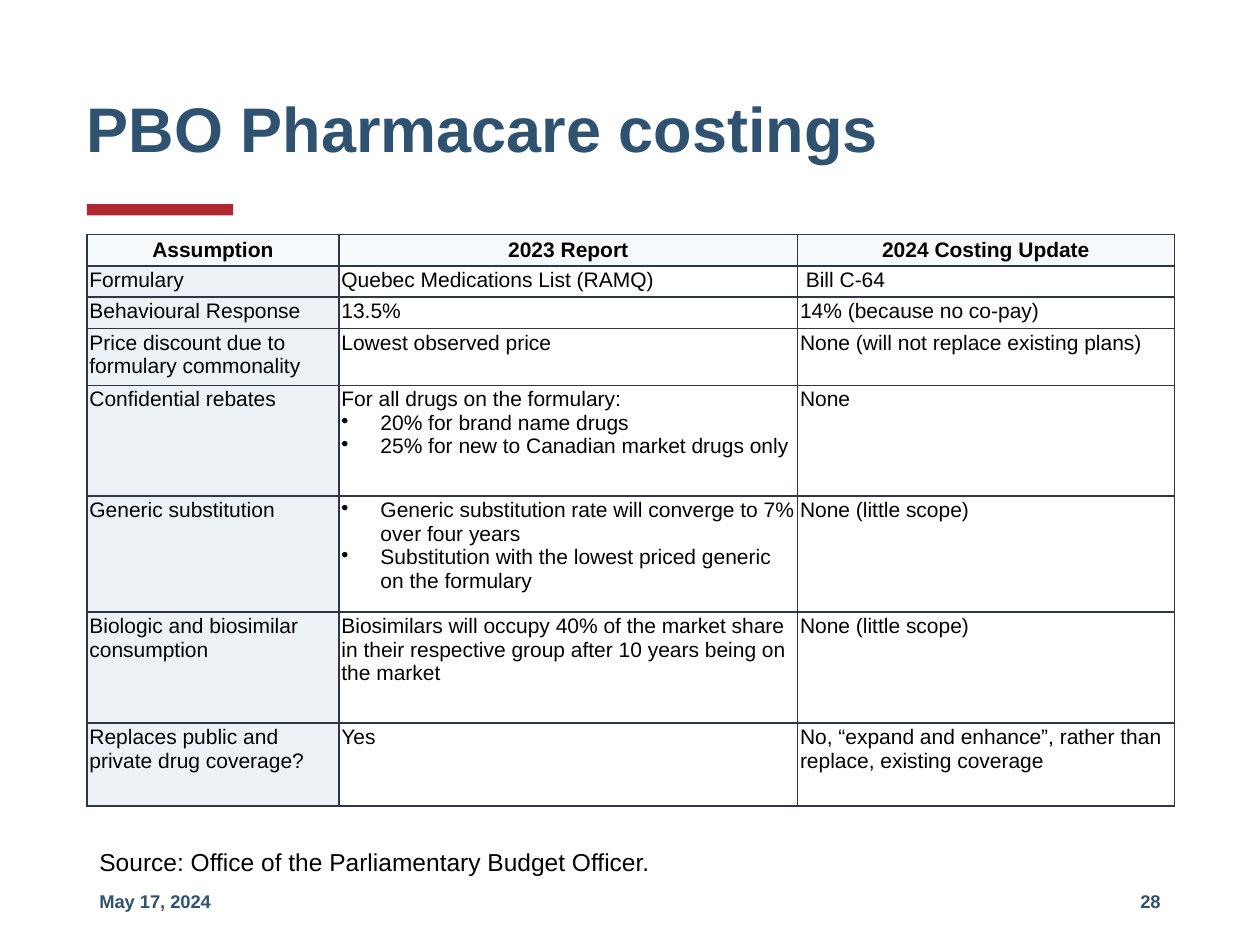
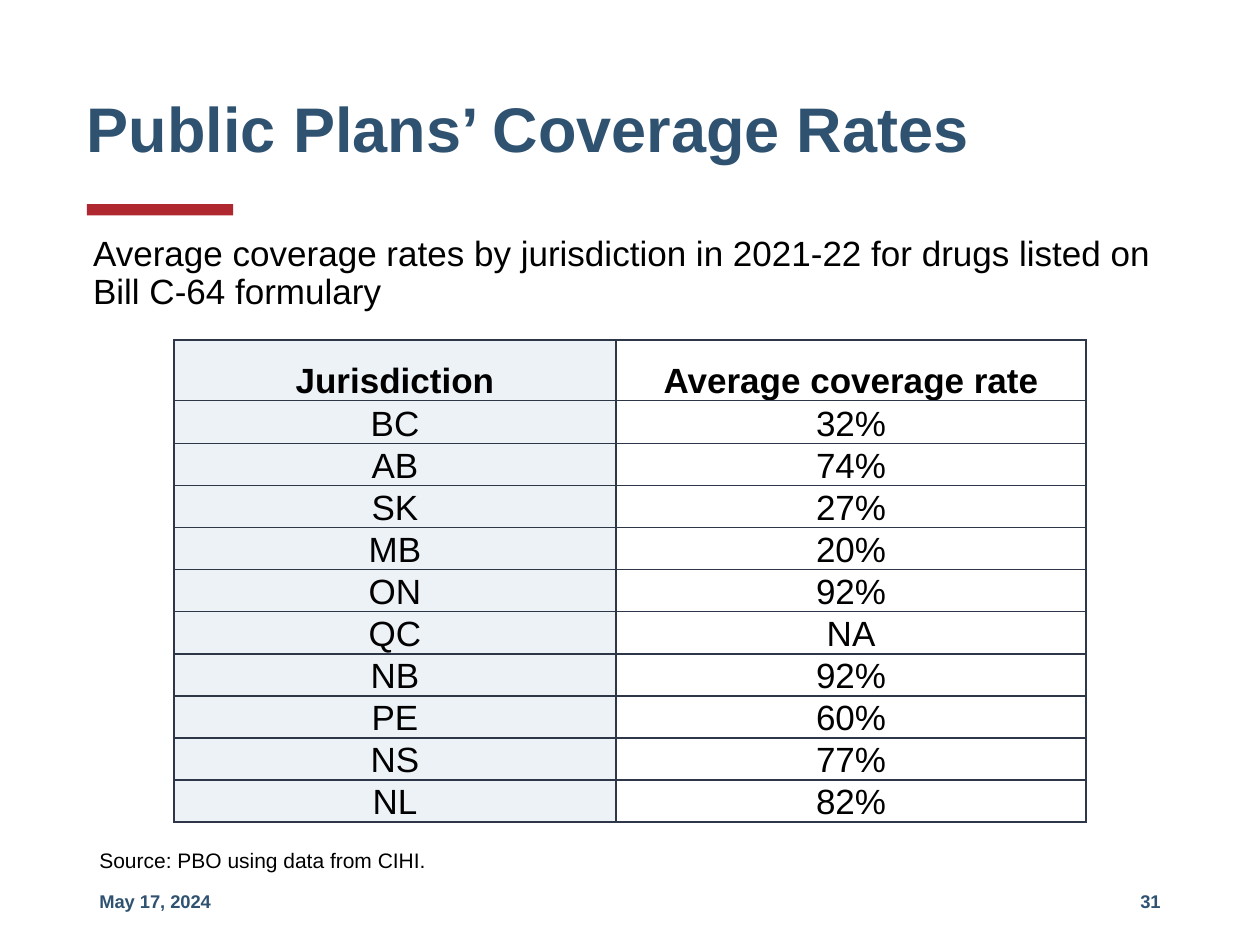
from dataclasses import dataclass
from lxml import etree
from pptx import Presentation, util as u
from pptx.dml import color
from pptx.enum import shapes, text
from pptx.oxml import ns


@dataclass(frozen=True)
class Theme:
    font: str = "Arial"
    navy: str = "2F5271"
    red: str = "AF272F"
    ink: str = "000000"
    border: str = "2D3748"
    head_fill: str = "F7FAFC"
    side_fill: str = "EDF2F7"
    title_size: float = 36
    lead_size: float = 20
    source_size: float = 14
    small_size: float = 12
    footer_size: float = 10.5


theme = Theme()
deck = Presentation()
deck.slide_width, deck.slide_height = u.Inches(10), u.Inches(7.5)
col, row = deck.slide_width / 100, deck.slide_height / 100
left, content = 6.9, 86.2
footer_width = 22.5
align = text.PP_ALIGN
anchor = text.MSO_ANCHOR


def add_span(para, words, size, ink=theme.ink, bold=False):
    span = para.add_run()
    span.text = words
    span.font.name = theme.font
    span.font.size = u.Pt(size)
    span.font.bold = bold
    span.font.color.rgb = color.RGBColor.from_string(ink)


def add_text(page, place, words, size, ink=theme.ink, bold=False,
             side=align.LEFT, hold=anchor.TOP, inset=0.1, spacing=0.9):
    x, y, width, height = place
    box = page.shapes.add_textbox(int(x * col), int(y * row), int(width * col), int(height * row))
    frame = box.text_frame
    frame.word_wrap = True
    frame.vertical_anchor = hold
    frame.margin_left = frame.margin_right = u.Inches(inset)
    para = frame.paragraphs[0]
    para.alignment = side
    para.line_spacing = spacing
    add_span(para, words, size, ink, bold)


costings = dict(
    title="PBO Pharmacare costings", number="28", lead=None,
    source="Source: Office of the Parliamentary Budget Officer.", source_size=theme.source_size,
    corner=(left, 24.8), widths=[20, 36.4, 29.9],
    heights=[3.33, 3.33, 3.33, 6, 11.73, 12.27, 11.73, 8.8],
    size=theme.small_size, inset=0.02, head_fills=[theme.head_fill] * 3,
    head_anchor=anchor.MIDDLE, body_anchor=anchor.TOP, body_align=align.LEFT,
    rows=[
        ["Assumption", "2023 Report", "2024 Costing Update"],
        ["Formulary", "Quebec Medications List (RAMQ)", " Bill C-64"],
        ["Behavioural Response", "13.5%", "14% (because no co-pay)"],
        ["Price discount due to formulary commonality", "Lowest observed price",
         "None (will not replace existing plans)"],
        ["Confidential rebates",
         "For all drugs on the formulary:\n•20% for brand name drugs\n"
         "•25% for new to Canadian market drugs only", "None"],
        ["Generic substitution",
         "•Generic substitution rate will converge to 7% over four years\n"
         "•Substitution with the lowest priced generic on the formulary", "None (little scope)"],
        ["Biologic and biosimilar consumption",
         "Biosimilars will occupy 40% of the market share in their respective group "
         "after 10 years being on the market", "None (little scope)"],
        ["Replaces public and private drug coverage?", "Yes",
         "No, “expand and enhance”, rather than replace, existing coverage"],
    ])
coverage = dict(
    title="Public Plans’ Coverage Rates", number="31",
    lead="Average coverage rates by jurisdiction in 2021-22 for drugs listed on Bill C-64 formulary",
    source="Source: PBO using data from CIHI.", source_size=theme.small_size,
    corner=(13.8, 36), widths=[35.1, 37.3],
    heights=[6.4, 4.53, 4.13, 4.27, 4.13] + [4.27] * 6,
    size=theme.lead_size, inset=0, head_fills=[theme.side_fill, None],
    head_anchor=anchor.BOTTOM, body_anchor=anchor.BOTTOM, body_align=align.CENTER,
    rows=[
        ["Jurisdiction", "Average coverage rate"],
        ["BC", "32%"], ["AB", "74%"], ["SK", "27%"], ["MB", "20%"], ["ON", "92%"],
        ["QC", "NA"], ["NB", "92%"], ["PE", "60%"], ["NS", "77%"], ["NL", "82%"],
    ])

for topic in (costings, coverage):
    page = deck.slides.add_slide(deck.slide_layouts[6])
    accent = page.shapes.add_shape(shapes.MSO_SHAPE.RECTANGLE, int(left * col), int(21.6 * row),
                                   int(11.6 * col), int(1.2 * row))
    accent.shadow.inherit = False
    accent.fill.solid()
    accent.fill.fore_color.rgb = color.RGBColor.from_string(theme.red)
    accent.line.fill.background()

    add_text(page, (left, 5.33, content, 17.33), topic["title"], theme.title_size,
             theme.navy, True, hold=anchor.MIDDLE, inset=0)
    if topic["lead"]:
        add_text(page, (6.4, 24.4, 86.8, 9.87), topic["lead"], theme.lead_size)

    widths, heights, rows = topic["widths"], topic["heights"], topic["rows"]
    x, y = topic["corner"]
    grid = page.shapes.add_table(len(rows), len(widths), int(x * col), int(y * row),
                                 int(sum(widths) * col), int(sum(heights) * row)).table
    grid.first_row = grid.horz_banding = False
    for column, width in zip(grid.columns, widths):
        column.width = int(width * col)
    for line, height in zip(grid.rows, heights):
        line.height = int(height * row)

    for r, entries in enumerate(rows):
        for c, entry in enumerate(entries):
            heading = r == 0
            cell = grid.cell(r, c)
            cell.margin_left = cell.margin_right = u.Inches(topic["inset"])
            cell.margin_top = cell.margin_bottom = u.Inches(topic["inset"])
            cell.vertical_anchor = topic["head_anchor"] if heading else topic["body_anchor"]
            properties = cell._tc.get_or_add_tcPr()
            for edge in ("a:lnL", "a:lnR", "a:lnT", "a:lnB"):
                border = etree.SubElement(properties, ns.qn(edge), w=str(u.Pt(1)))
                solid = etree.SubElement(border, ns.qn("a:solidFill"))
                etree.SubElement(solid, ns.qn("a:srgbClr"), val=theme.border)
            body_fill = theme.side_fill if c == 0 else None
            fill = topic["head_fills"][c] if heading else body_fill
            if fill:
                cell.fill.solid()
                cell.fill.fore_color.rgb = color.RGBColor.from_string(fill)
            else:
                cell.fill.background()

            for i, words in enumerate(entry.split("\n")):
                frame = cell.text_frame
                para = frame.add_paragraph() if i else frame.paragraphs[0]
                para.alignment = align.CENTER if heading else topic["body_align"]
                if words.startswith("•"):
                    layout = para._p.get_or_add_pPr()
                    layout.set("marL", str(u.Inches(0.31)))
                    layout.set("indent", str(-u.Inches(0.31)))
                    etree.SubElement(layout, ns.qn("a:buChar"), char="•")
                add_span(para, words.removeprefix("•"), topic["size"], bold=heading)

    add_text(page, (left, 89.33, content, 5.33), topic["source"], topic["source_size"])
    for x, words, side in ((left, "May 17, 2024", align.LEFT),
                           (left + content - footer_width, topic["number"], align.RIGHT)):
        add_text(page, (x, 92.67, footer_width, 5.33), words, theme.footer_size, theme.navy,
                 True, side, anchor.MIDDLE, spacing=1.0)

deck.save("out.pptx")
